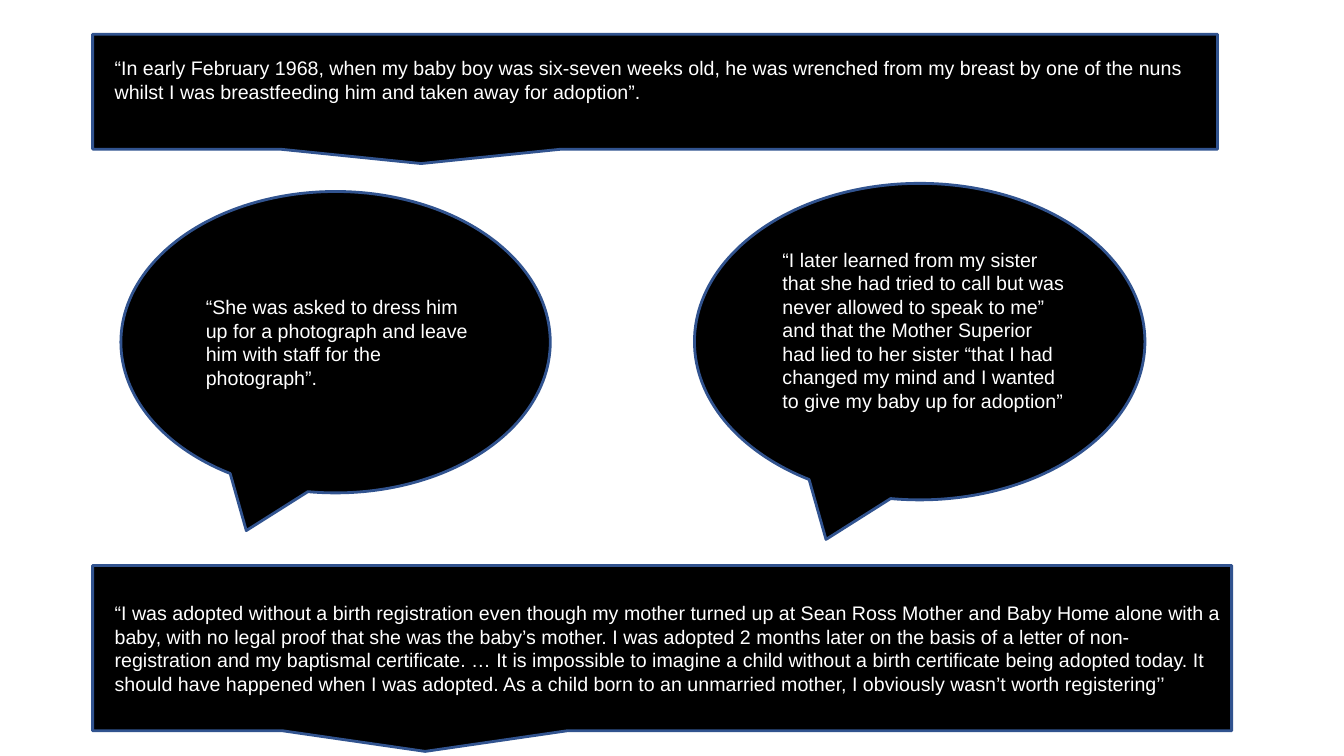
"""Build a slide of four testimony quotes in speech callouts."""
from pptx import Presentation
from pptx.dml.color import RGBColor
from pptx.enum.shapes import MSO_SHAPE
from pptx.enum.text import MSO_ANCHOR, PP_ALIGN
from pptx.util import Pt

BOX = MSO_SHAPE.ROUNDED_RECTANGULAR_CALLOUT
BUBBLE = MSO_SHAPE.OVAL_CALLOUT
MIDDLE = MSO_ANCHOR.MIDDLE
LEFT = PP_ALIGN.LEFT

BLANK_LAYOUT = 6
SLIDE_SIZE = (960, 540)
BLACK, BLUE, WHITE = "000000", "31538F", "FFFFFF"
TAIL = (-0.208, 0.625)
SQUARE_CORNERS = 0
QUOTE_INDENT = 8.64
SIDE_INSET, EDGE_INSET, RAISED_INSET = 7.2, 3.6, 20.4

QUOTES = [
    (BOX, (66.2, 24.5, 803.5, 82.1), RAISED_INSET,
     "“In early February 1968, when my baby boy was six-seven weeks old, he was wrenched "
     "from my breast by one of the nuns whilst I was breastfeeding him and taken away for "
     "adoption”."),
    (BUBBLE, (86.4, 136.8, 306.7, 215.3), EDGE_INSET,
     "“She was asked to dress him up for a photograph and leave him with staff for the "
     "photograph”."),
    (BUBBLE, (496.1, 131, 321.8, 226.1), RAISED_INSET,
     "“I later learned from my sister that she had tried to call but was never allowed to "
     "speak to me” and that the Mother Superior had lied to her sister “that I had changed "
     "my mind and I wanted to give my baby up for adoption”"),
    (BOX, (66.2, 403.9, 813.6, 118.1), EDGE_INSET,
     "“I was adopted without a birth registration even though my mother turned up at Sean "
     "Ross Mother and Baby Home alone with a baby, with no legal proof that she was the "
     "baby’s mother. I was adopted 2 months later on the basis of a letter of "
     "non-registration and my baptismal certificate. … It is impossible to imagine a child "
     "without a birth certificate being adopted today. It should have happened when I was "
     "adopted. As a child born to an unmarried mother, I obviously wasn’t worth "
     "registering’’"),
]


def color(hex_value):
    return RGBColor.from_string(hex_value)


def set_attributes(target, values):
    for name, value in values.items():
        setattr(target, name, value)


def add_quote(slide, kind, bounds, bottom_inset, text):
    shape = slide.shapes.add_shape(kind, *map(Pt, bounds))
    shape.shadow.inherit = False
    adjustments = TAIL + (SQUARE_CORNERS,) if kind == BOX else TAIL
    for index, value in enumerate(adjustments):
        shape.adjustments[index] = value
    shape.fill.solid()
    shape.fill.fore_color.rgb = color(BLACK)
    shape.line.color.rgb = color(BLUE)
    shape.line.width = Pt(2)

    frame = shape.text_frame
    set_attributes(frame, {
        "word_wrap": True,
        "vertical_anchor": MIDDLE,
        "margin_left": Pt(SIDE_INSET),
        "margin_right": Pt(SIDE_INSET),
        "margin_top": Pt(EDGE_INSET),
        "margin_bottom": Pt(bottom_inset),
    })
    paragraph = frame.paragraphs[0]
    paragraph.alignment = LEFT
    paragraph_format = {"marL": Pt(QUOTE_INDENT), "indent": 0}
    for name, value in paragraph_format.items():
        paragraph._p.get_or_add_pPr().set(name, str(value))
    run = paragraph.add_run()
    run.text = text
    set_attributes(run.font, {"name": "Arial", "size": Pt(14)})
    run.font.color.rgb = color(WHITE)


def main():
    presentation = Presentation()
    presentation.slide_width, presentation.slide_height = map(Pt, SLIDE_SIZE)
    slide = presentation.slides.add_slide(presentation.slide_layouts[BLANK_LAYOUT])
    for quote in QUOTES:
        add_quote(slide, *quote)
    presentation.save("out.pptx")


if __name__ == "__main__":
    main()
